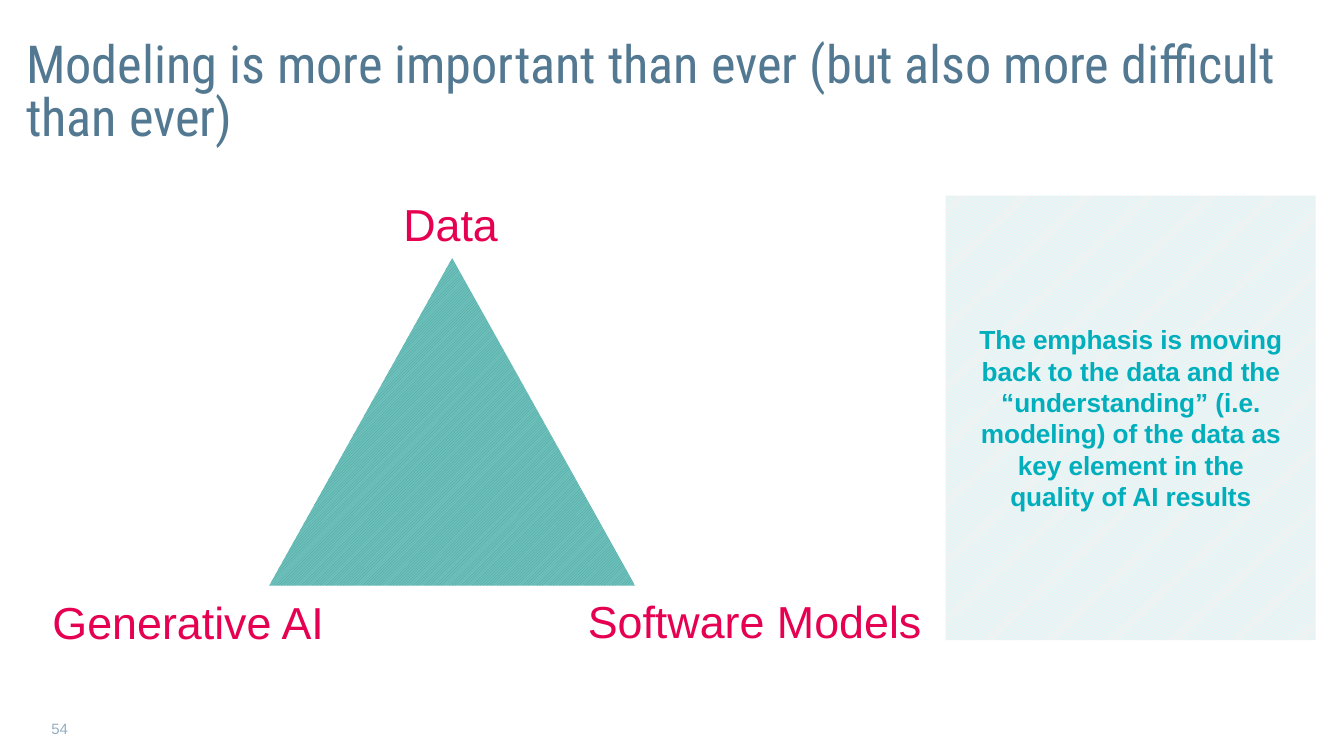
import pptx
import pptx.util
import pptx.dml.color
import pptx.enum.dml
import pptx.enum.shapes
import pptx.enum.text

Inches = pptx.util.Inches
RGBColor = pptx.dml.color.RGBColor
Align = pptx.enum.text.PP_ALIGN
Anchor = pptx.enum.text.MSO_ANCHOR
Shape = pptx.enum.shapes.MSO_SHAPE

SLATE = RGBColor(0x53, 0x79, 0x92)
MIST = RGBColor(0x94, 0xAF, 0xC2)
PINK = RGBColor(0xE5, 0x00, 0x51)
CYAN = RGBColor(0x00, 0xAE, 0xBC)
ICE = RGBColor(0xBF, 0xFA, 0xFF)
PALE = RGBColor(0xF2, 0xF2, 0xF2)
TEAL = RGBColor(0x47, 0xA1, 0x9C)
MINT = RGBColor(0x6E, 0xC0, 0xBB)


def write(shape, text, size, color, font="Arial", bold=False,
          align=Align.LEFT, anchor=Anchor.MIDDLE, inset=0):
    """Fill a shape with one formatted paragraph."""
    frame = shape.text_frame
    frame.text = text
    frame.word_wrap = True
    frame.auto_size = pptx.enum.text.MSO_AUTO_SIZE.NONE
    frame.vertical_anchor = anchor
    frame.margin_left = frame.margin_right = Inches(inset)
    frame.margin_top = frame.margin_bottom = Inches(inset)
    para = frame.paragraphs[0]
    para.alignment = align
    face = para.runs[0].font
    face.name, face.size, face.bold = font, pptx.util.Pt(size), bold
    face.color.rgb = color
    return para


def add_label(slide, box, text, size, color, anchor):
    label = slide.shapes.add_textbox(*map(Inches, box))
    write(label, text, size, color, anchor=anchor)


def add_hatch(slide, kind, box, fore, back):
    """Add a borderless shape with diagonal hatching."""
    shape = slide.shapes.add_shape(kind, *map(Inches, box))
    shape.shadow.inherit = False
    shape.line.fill.background()
    shape.fill.patterned()
    shape.fill.pattern = pptx.enum.dml.MSO_PATTERN.DARK_UPWARD_DIAGONAL
    shape.fill.fore_color.rgb = fore
    shape.fill.back_color.rgb = back
    return shape


def add_title(slide, box, text):
    title = slide.shapes.title
    title.left, title.top, title.width, title.height = map(Inches, box)
    para = write(title, text, 37.33, SLATE, font="Roboto Condensed",
                 anchor=Anchor.TOP)
    para.line_spacing = 0.85


def add_model(slide, box):
    """Place the triangle and name its three corners."""
    left, top, width, height = box
    add_hatch(slide, Shape.ISOSCELES_TRIANGLE, box, TEAL, MINT)
    base = top + height + 0.07
    corners = (
        ("Data", left + 1.33, top - 0.62, 2.05),
        ("Generative AI", left - 2.15, base + 0.01, 2.87),
        ("Software Models", left + width - 0.47, base, 3.45),
    )
    for text, x, y, wide in corners:
        add_label(slide, (x, y, wide, 0.54), text, 32, PINK, Anchor.BOTTOM)


def add_panel(slide, box, text):
    panel = add_hatch(slide, Shape.RECTANGLE, box, ICE, PALE)
    write(panel, text, 18.67, CYAN, bold=True, align=Align.CENTER, inset=0.32)


def main():
    deck = pptx.Presentation()
    deck.slide_width, deck.slide_height = Inches(13.33), Inches(7.5)
    slide = deck.slides.add_slide(deck.slide_layouts[5])

    # Title
    add_title(slide, (0.26, 0.4, 12.96, 0.93),
              "Modeling is more important than ever "
              "(but also more difficult than ever)")

    # Page number
    add_label(slide, (0.51, 7.1, 0.6, 0.26), "54", 10.7, MIST, Anchor.MIDDLE)

    # Takeaway panel
    add_panel(slide, (9.38, 1.94, 3.67, 4.41),
              "The emphasis is moving back to the data and the "
              "“understanding” (i.e. modeling) of the data as key element "
              "in the quality of AI results")

    # Triangle diagram
    add_model(slide, (2.67, 2.56, 3.63, 3.25))

    deck.save("out.pptx")


if __name__ == "__main__":
    main()
